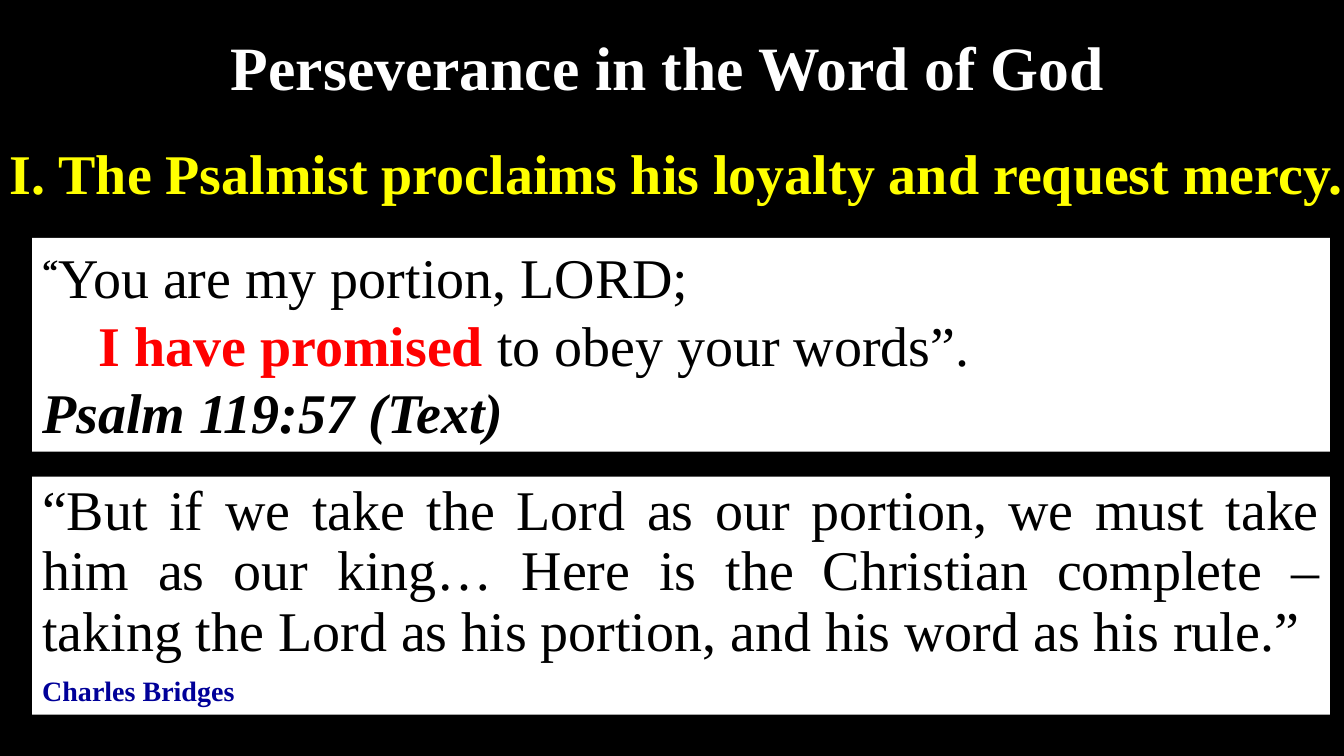
from dataclasses import dataclass

from pptx import Presentation
from pptx import util as u
from pptx.dml.color import RGBColor
from pptx.enum import shapes, text


@dataclass(frozen=True)
class Theme:
    font: str = "Times New Roman"
    black: str = "000000"
    white: str = "FFFFFF"
    yellow: str = "FFFF00"
    red: str = "FF0000"
    navy: str = "000099"
    title: int = 44
    body: int = 40
    credit: int = 20


class SlideBuilder:
    def __init__(self, page, theme):
        self.page = page
        self.theme = theme
        self.paint(page.background.fill, theme.black)

    def paint(self, fill, color):
        fill.solid()
        fill.fore_color.rgb = RGBColor.from_string(color)

    def frame(self, box, wrap):
        frame = box.text_frame
        frame.word_wrap = wrap
        frame.auto_size = text.MSO_AUTO_SIZE.SHAPE_TO_FIT_TEXT
        frame.vertical_anchor = text.MSO_ANCHOR.TOP
        return frame

    def style(self, para, size, color, align=text.PP_ALIGN.LEFT, bold=False, italic=False):
        para.alignment = align
        font = para.font
        font.name = self.theme.font
        font.size = u.Pt(size)
        font.bold = bold
        font.italic = italic
        font.color.rgb = RGBColor.from_string(color)

    def heading(self, words, left, top, width, height, size, color, align):
        box = self.page.shapes.add_textbox(*map(u.Inches, (left, top, width, height)))
        para = self.frame(box, False).paragraphs[0]
        para.text = words
        self.style(para, size, color, align, bold=True)

    def panel(self, top, height):
        place = map(u.Inches, (0.32, top, 12.87, height))
        box = self.page.shapes.add_shape(shapes.MSO_SHAPE.RECTANGLE, *place)
        box.shadow.inherit = False
        box.line.fill.background()
        self.paint(box.fill, self.theme.white)
        return self.frame(box, True)

    def span(self, para, words, bold=None, color=None, baseline=None):
        span = para.add_run()
        span.text = words
        span.font.bold = bold
        if color:
            span.font.color.rgb = RGBColor.from_string(color)
        if baseline:
            span.font._element.set("baseline", str(baseline * 1000))

    def hang(self, para, inches):
        properties = para._p.get_or_add_pPr()
        properties.set("marL", str(u.Inches(inches)))
        properties.set("indent", str(u.Inches(-inches)))

    def verse(self, top, height):
        theme = self.theme
        frame = self.panel(top, height)
        para = frame.paragraphs[0]
        self.style(para, theme.body, theme.black)
        self.hang(para, 0.56)
        self.span(para, "“", bold=True, baseline=30)
        self.span(para, "You are my portion, LORD;")
        para.add_line_break()
        self.span(para, "I have promised ", bold=True, color=theme.red)
        self.span(para, "to obey your words”.")
        reference = frame.add_paragraph()
        reference.text = "Psalm 119:57 (Text)"
        self.style(reference, theme.body, theme.black, bold=True, italic=True)

    def quotation(self, words, author, top, height):
        theme = self.theme
        frame = self.panel(top, height)
        quote, credit = frame.paragraphs[0], frame.add_paragraph()
        quote.text, credit.text = words, author
        self.style(quote, theme.body, theme.black, text.PP_ALIGN.JUSTIFY)
        self.style(credit, theme.credit, theme.navy, bold=True)
        for para in (quote, credit):
            para.line_spacing = 0.9
            para.space_before = u.Pt(10)


def main():
    deck = Presentation()
    deck.slide_width, deck.slide_height = u.Inches(13.33), u.Inches(7.5)
    theme = Theme()
    builder = SlideBuilder(deck.slides.add_slide(deck.slide_layouts[6]), theme)
    builder.verse(2.36, 2.12)
    builder.quotation(
        "“But if we take the Lord as our portion, we must take him as our king… "
        "Here is the Christian complete – taking the Lord as his portion, "
        "and his word as his rule.” ",
        "Charles Bridges", 4.73, 2.36)
    builder.heading("I. The Psalmist proclaims his loyalty and request mercy.",
                    0, 1.33, 13.57, 0.77, theme.body, theme.yellow, text.PP_ALIGN.LEFT)
    builder.heading("Perseverance in the Word of God",
                    2.15, 0.24, 8.95, 0.84, theme.title, theme.white, text.PP_ALIGN.CENTER)
    deck.save("out.pptx")


if __name__ == "__main__":
    main()
